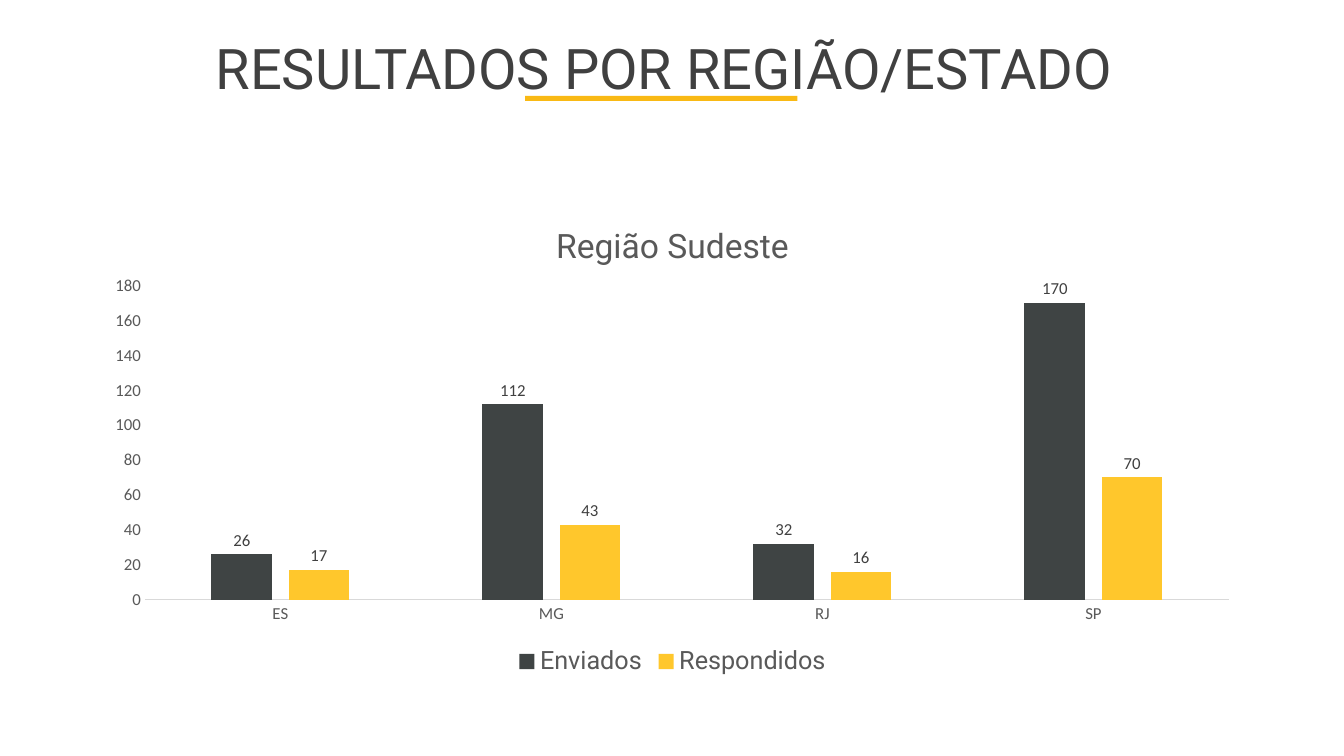
from lxml.etree import SubElement
from pptx import Presentation
from pptx.chart.data import CategoryChartData
from pptx.dml.color import RGBColor
from pptx.enum.chart import XL_CHART_TYPE, XL_LABEL_POSITION, XL_LEGEND_POSITION, XL_TICK_MARK
from pptx.enum.shapes import MSO_SHAPE
from pptx.enum.text import PP_ALIGN
from pptx.oxml.ns import qn
from pptx.util import Inches, Pt

DARK, GREY, LINE = "404040", "595959", "D9D9D9"
STATES = ["ES", "MG", "RJ", "SP"]
SERIES = [
    ("Enviados", [26, 112, 32, 170], "3F4444"),
    ("Respondidos", [17, 43, 16, 70], "FFC72C"),
]


def rgb(value):
    return RGBColor.from_string(value)


def set_font(font, size, color, name="Calibri"):
    font.size, font.name, font.bold = Pt(size), name, False
    font.color.rgb = rgb(color)


def write(tf, text, size, color, name="Roboto", align=PP_ALIGN.CENTER):
    p = tf.paragraphs[0]
    p.alignment = align
    r = p.add_run()
    r.text = text
    set_font(r.font, size, color, name)


def add_heading(s, x, y, w, h):
    rule = s.shapes.add_shape(
        MSO_SHAPE.RECTANGLE, Inches(x + 5.29), Inches(y + 0.67), Inches(2.7), Inches(0.05))
    rule.shadow.inherit = False
    rule.fill.solid()
    rule.fill.fore_color.rgb = rgb("F9B914")
    rule.line.fill.background()
    tf = s.shapes.add_textbox(Inches(x), Inches(y), Inches(w), Inches(h)).text_frame
    tf.word_wrap = True
    write(tf, "RESULTADOS POR REGIÃO/ESTADO", 40, DARK)


def place_plot(chart, x, y, w, h):
    area = chart.plots[0]._element.getparent()
    for old in area.findall(qn("c:layout")):
        area.remove(old)
    layout = SubElement(area, qn("c:layout"))
    area.insert(0, layout)
    manual = SubElement(layout, qn("c:manualLayout"))
    for tag, val in [("layoutTarget", "inner"), ("xMode", "edge"), ("yMode", "edge"),
                     ("x", x), ("y", y), ("w", w), ("h", h)]:
        SubElement(manual, qn(f"c:{tag}")).set("val", str(val))


def format_axes(chart):
    for axis in (chart.category_axis, chart.value_axis):
        axis.has_major_gridlines = False
        axis.major_tick_mark = axis.minor_tick_mark = XL_TICK_MARK.NONE
        set_font(axis.tick_labels.font, 12, GREY)
    line = chart.category_axis.format.line
    line.color.rgb = rgb(LINE)
    line.width = Pt(0.75)
    axis = chart.value_axis
    axis.format.line.fill.background()
    axis.minimum_scale, axis.maximum_scale, axis.major_unit = 0, 180, 20


def format_series(series, color):
    series.format.fill.solid()
    series.format.fill.fore_color.rgb = rgb(color)
    series.invert_if_negative = False
    labels = series.data_labels
    labels.show_value = True
    labels.position = XL_LABEL_POSITION.OUTSIDE_END
    set_font(labels.font, 12, DARK)


def add_region_chart(s, x, y, w, h):
    data = CategoryChartData()
    data.categories = STATES
    for name, values, _ in SERIES:
        data.add_series(name, values)
    chart = s.shapes.add_chart(
        XL_CHART_TYPE.COLUMN_CLUSTERED, Inches(x), Inches(y), Inches(w), Inches(h), data).chart
    set_font(chart.font, 10, "000000")
    chart.has_title = True
    write(chart.chart_title.text_frame, "Região Sudeste", 24, GREY)
    chart.chart_title.include_in_layout = False
    chart.has_legend = True
    chart.legend.position = XL_LEGEND_POSITION.BOTTOM
    chart.legend.include_in_layout = False
    set_font(chart.legend.font, 18, GREY, "Roboto")
    plot = chart.plots[0]
    plot.gap_width, plot.overlap, plot.vary_by_categories = 219, -27, False
    format_axes(chart)
    for series, (_, _, color) in zip(plot.series, SERIES):
        format_series(series, color)
    place_plot(chart, 0.045, 0.175, 0.935, 0.655)


def main():
    prs = Presentation()
    prs.slide_width, prs.slide_height = Inches(13.33), Inches(7.5)
    s = prs.slides.add_slide(prs.slide_layouts[6])
    add_heading(s, -0.08, 0.28, 13.33, 0.77)
    add_region_chart(s, 0.92, 2, 11.5, 4.76)
    prs.save("out.pptx")


if __name__ == "__main__":
    main()
